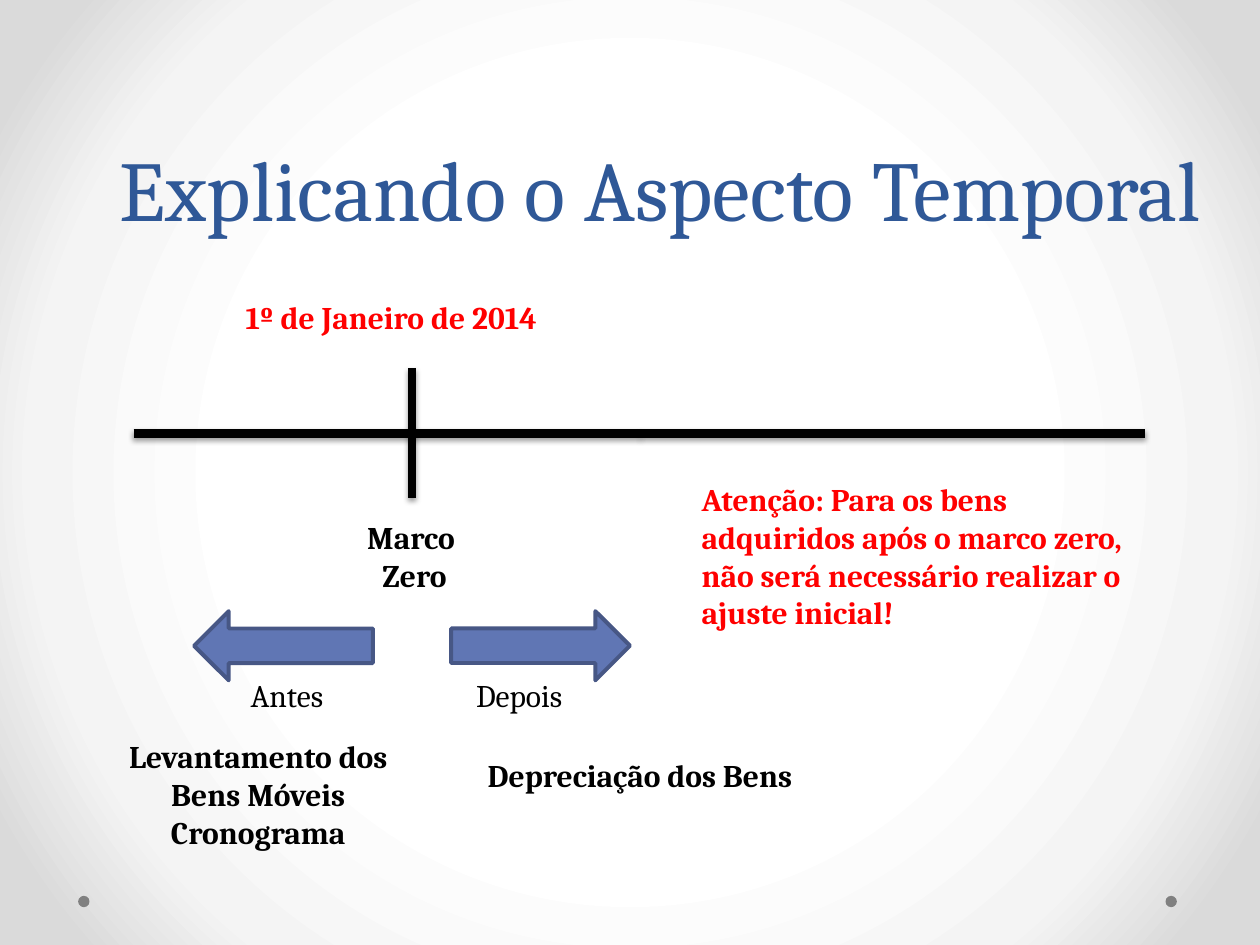
import pptx
import pptx.util
import pptx.dml.color
import pptx.enum.shapes
import pptx.enum.text
import pptx.oxml
import pptx.oxml.ns

Inches = pptx.util.Inches
Pt = pptx.util.Pt
SHAPE = pptx.enum.shapes.MSO_SHAPE
ALIGN = pptx.enum.text.PP_ALIGN

FONT = "Cambria"
COLORS = {
    "title": "2F5897",
    "text": "000000",
    "alert": "FF0000",
    "arrow": "6076B4",
    "edge": "475785",
    "dot": "808080",
}
STOPS = [(50, "FFFFFF"), (76, "F4F4F4"), (92, "DADADA")]


def color(name):
    return pptx.dml.color.RGBColor.from_string(COLORS[name])


def xml(tag, attrs, inner):
    space = pptx.oxml.ns.nsdecls("a")
    return pptx.oxml.parse_xml(f"<a:{tag} {space} {attrs}>{inner}</a:{tag}>")


def style(para, size, tint, bold=False, align=None):
    para.font.name = FONT
    para.font.size = Pt(size)
    para.font.bold = bold
    para.font.color.rgb = color(tint)
    para.alignment = align


def add_back(slide):
    fill = slide.background.fill
    fill.solid()
    solid = slide._element.find(".//" + pptx.oxml.ns.qn("a:solidFill"))
    stops = "".join(
        f'<a:gs pos="{pos * 1000}"><a:srgbClr val="{tint}"/></a:gs>'
        for pos, tint in STOPS
    )
    half = 'l="50000" t="50000" r="50000" b="50000"'
    inner = (f"<a:gsLst>{stops}</a:gsLst>"
             f'<a:path path="circle"><a:fillToRect {half}/></a:path>')
    solid.getparent().replace(solid, xml("gradFill", 'rotWithShape="1"', inner))


def add_title(slide, text):
    title = slide.shapes.title
    title.left, title.top = Inches(0.67), Inches(0.69)
    title.width, title.height = Inches(9.14), Inches(1.25)
    frame = title.text_frame
    frame.text = text
    frame.word_wrap = True
    frame.auto_size = pptx.enum.text.MSO_AUTO_SIZE.NONE
    frame.vertical_anchor = pptx.enum.text.MSO_ANCHOR.BOTTOM
    para = frame.paragraphs[0]
    style(para, 48.6, "title", align=ALIGN.CENTER)
    para.line_spacing = Pt(58)


def add_text(slide, lines, left, top, width, height,
             tint="text", bold=True, align=None):
    box = slide.shapes.add_textbox(
        Inches(left), Inches(top), Inches(width), Inches(height))
    frame = box.text_frame
    frame.word_wrap = True
    frame.text = "\n".join(lines)
    for para in frame.paragraphs:
        style(para, 18, tint, bold, align)


def add_line(slide, x1, y1, x2, y2):
    line = slide.shapes.add_connector(
        pptx.enum.shapes.MSO_CONNECTOR.STRAIGHT,
        Inches(x1), Inches(y1), Inches(x2), Inches(y2))
    line.line.color.rgb = color("text")
    line.line.width = Pt(4.75)
    shade = (f'<a:outerShdw blurRad="{Pt(3.1)}" dist="{Pt(1.6)}" '
             'dir="5400000" rotWithShape="0"><a:srgbClr val="000000">'
             '<a:alpha val="38000"/></a:srgbClr></a:outerShdw>')
    line._element.spPr.append(xml("effectLst", "", shade))


def add_shape(slide, kind, left, top, width, height, tint):
    shape = slide.shapes.add_shape(
        kind, Inches(left), Inches(top), Inches(width), Inches(height))
    shape.shadow.inherit = False
    shape.fill.solid()
    shape.fill.fore_color.rgb = color(tint)
    shape.line.fill.background()
    return shape


def add_arrow(slide, left, turn):
    arrow = add_shape(slide, SHAPE.RIGHT_ARROW, left, 4.85, 1.42, 0.55, "arrow")
    arrow.rotation = turn
    arrow.line.color.rgb = color("edge")
    arrow.line.width = Pt(2.25)


def main():
    deck = pptx.Presentation()
    deck.slide_width, deck.slide_height = Inches(10), Inches(7.5)
    slide = deck.slides.add_slide(deck.slide_layouts[5])

    # Background, corner dots and title
    add_back(slide)
    for left in (9.25, 0.62):
        add_shape(slide, SHAPE.OVAL, left, 7.11, 0.09, 0.09, "dot")
    add_title(slide, "Explicando o Aspecto Temporal")

    # Time line with its zero mark
    add_line(slide, 1.06, 3.44, 5.08, 3.44)
    add_line(slide, 5.08, 3.44, 9.09, 3.44)
    add_line(slide, 3.27, 2.92, 3.27, 3.95)
    add_text(slide, ["1º de Janeiro de 2014"], 1.85, 2.32, 3.15, 0.4, "alert")
    add_text(slide, ["Marco ", "Zero"], 2.53, 4.06, 1.52, 0.71,
             align=ALIGN.CENTER)

    # Before and after
    add_arrow(slide, 1.54, 180)
    add_arrow(slide, 3.58, 0)
    add_text(slide, ["Antes"], 1.89, 5.32, 1.22, 0.4, bold=False)
    add_text(slide, ["Depois"], 3.68, 5.32, 1.22, 0.4, bold=False)
    add_text(slide, ["Levantamento dos Bens Móveis", "Cronograma"],
             0.67, 5.8, 2.76, 1.01, align=ALIGN.CENTER)
    add_text(slide, ["Depreciação dos Bens"], 3.7, 5.95, 2.76, 0.71,
             align=ALIGN.CENTER)

    # Warning
    add_text(slide, ["Atenção: Para os bens adquiridos após o marco zero, "
                     "não será necessário realizar o ajuste inicial!"],
             5.47, 3.76, 3.86, 1.31, "alert")

    deck.save("out.pptx")


if __name__ == "__main__":
    main()
